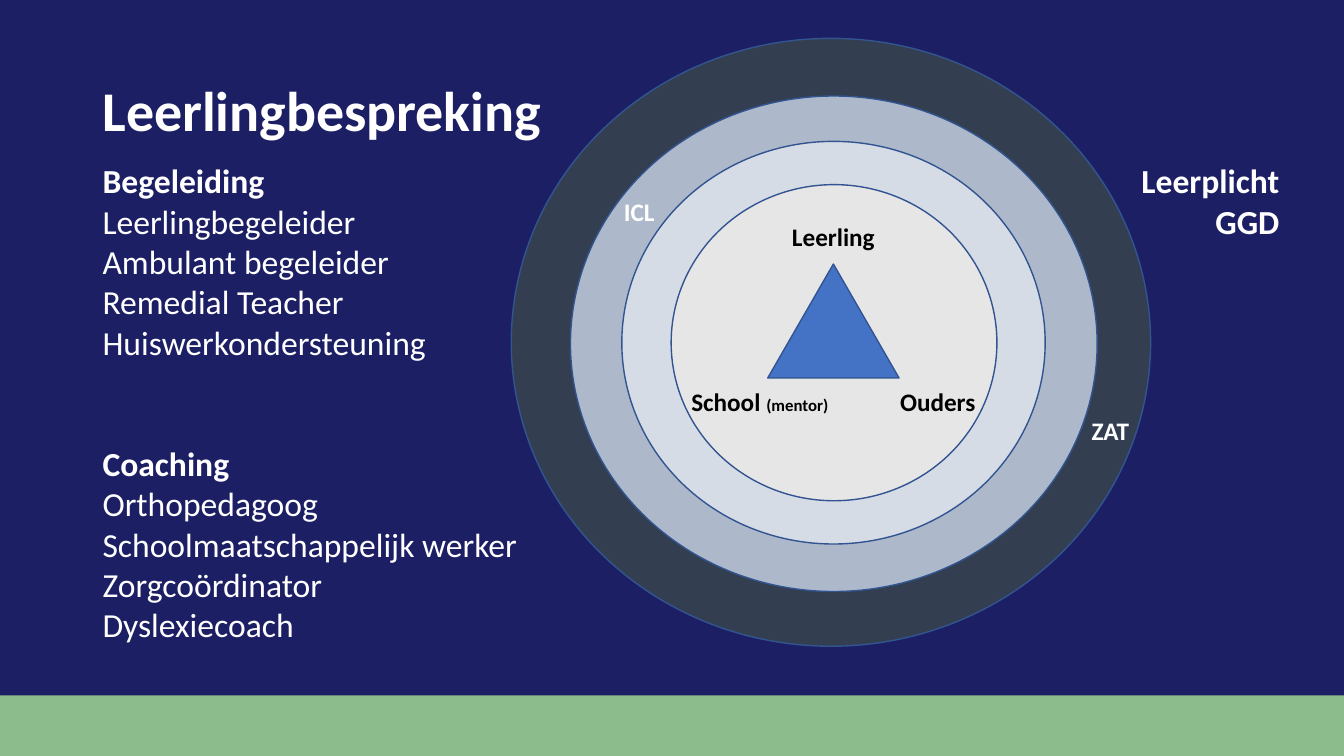
"""Builds the slide on pupil discussion: rings of care around pupil, school and parents."""
from pptx import Presentation
from pptx.dml.color import RGBColor
from pptx.enum.shapes import MSO_SHAPE
from pptx.enum.text import MSO_ANCHOR, PP_ALIGN
from pptx.util import Pt

OVAL, TRIANGLE, RECTANGLE = MSO_SHAPE.OVAL, MSO_SHAPE.ISOSCELES_TRIANGLE, MSO_SHAPE.RECTANGLE
LEFT, RIGHT = PP_ALIGN.LEFT, PP_ALIGN.RIGHT
MIDDLE = MSO_ANCHOR.MIDDLE

FONT = "Calibri"
COLORS = {
    "background": "1D1F65", "band": "8CBB8C", "outline": "325491",
    "outer": "333F50", "care": "ADB9CA", "support": "D6DCE5", "core": "E7E6E6",
    "triangle": "4472C4", "white": "FFFFFF", "black": "000000",
}
SLIDE_SIZE = (960, 540)
BAND_HEIGHT = 43.2
TITLE = "Leerlingbespreking"
TITLE_BOX = (66, 28.8, 828, 104.4)

FIGURE = [
    (OVAL, "outer", (365.2, 27.4, 456.7, 434.2)),
    (OVAL, "care", (407.5, 68.6, 376.2, 353.9)),
    (OVAL, "support", (444.2, 101, 302.4, 287.6)),
    (OVAL, "core", (479.4, 131.9, 232.7, 225.8)),
    (TRIANGLE, "triangle", (548.4, 188.6, 93.8, 81.4)),
]
LABELS = [
    ([("Leerling", 18)], (558.6, 154.8, 87.1, 29.1), "black"),
    ([("Ouders", 18)], (635.8, 272.6, 77.8, 29.1), "black"),
    ([("School ", 18), ("(mentor)", 12)], (486.7, 272.2, 136.1, 29.1), "black"),
    ([("ICL", 18)], (438.5, 136.8, 37.8, 29.1), "white"),
    ([("ZAT", 18)], (772.6, 293, 43.2, 29.1), "white"),
]
TEAMS = {
    "Begeleiding": ["Leerlingbegeleider", "Ambulant begeleider",
                    "Remedial Teacher", "Huiswerkondersteuning"],
    "Coaching": ["Orthopedagoog", "Schoolmaatschappelijk werker",
                 "Zorgcoördinator", "Dyslexiecoach"],
}
TEAMS_BOX = (66.2, 110.9, 321.1, 365.8)
TEAM_GAP = 58
PARTNERS = ["Leerplicht", "GGD"]
PARTNERS_BOX = (785.5, 110.9, 135.4, 65.5)


def color(name):
    return RGBColor.from_string(COLORS[name])


def add_text(paragraph, text, size=24, bold=True, ink="white", align=LEFT, before=0):
    paragraph.alignment = align
    paragraph.space_before = Pt(before)
    run = paragraph.add_run()
    run.text = text
    run.font.name = FONT
    run.font.size = Pt(size)
    run.font.bold = bold
    run.font.color.rgb = color(ink)


def add_frame(slide, box):
    frame = slide.shapes.add_textbox(*map(Pt, box)).text_frame
    frame.word_wrap = True
    return frame


def add_lines(frame, lines):
    for index, (text, style) in enumerate(lines):
        paragraph = frame.add_paragraph() if index else frame.paragraphs[0]
        add_text(paragraph, text, **style)


def add_filled(slide, kind, fill, box):
    part = slide.shapes.add_shape(kind, *map(Pt, box))
    part.shadow.inherit = False
    part.fill.solid()
    part.fill.fore_color.rgb = color(fill)
    return part


def main():
    deck = Presentation()
    width, height = SLIDE_SIZE
    deck.slide_width, deck.slide_height = Pt(width), Pt(height)
    slide = deck.slides.add_slide(deck.slide_layouts[5])
    slide.background.fill.solid()
    slide.background.fill.fore_color.rgb = color("background")

    title = slide.shapes.title
    title.left, title.top, title.width, title.height = map(Pt, TITLE_BOX)
    title.text_frame.vertical_anchor = MIDDLE
    title.text_frame.paragraphs[0].line_spacing = 0.9
    add_text(title.text_frame.paragraphs[0], TITLE, size=40)

    band = add_filled(slide, RECTANGLE, "band", (0, height - BAND_HEIGHT, width, BAND_HEIGHT))
    band.line.fill.background()
    for kind, fill, box in FIGURE:
        part = add_filled(slide, kind, fill, box)
        part.line.color.rgb = color("outline")
        part.line.width = Pt(1)

    for runs, box, ink in LABELS:
        label = add_frame(slide, box).paragraphs[0]
        for text, size in runs:
            add_text(label, text, size=size, ink=ink)

    team_lines = []
    for team, members in TEAMS.items():
        team_lines.append((team, {"before": TEAM_GAP if team_lines else 0}))
        team_lines += [(member, {"bold": False}) for member in members]
    add_lines(add_frame(slide, TEAMS_BOX), team_lines)
    add_lines(add_frame(slide, PARTNERS_BOX), [(name, {"align": RIGHT}) for name in PARTNERS])

    deck.save("out.pptx")


if __name__ == "__main__":
    main()
